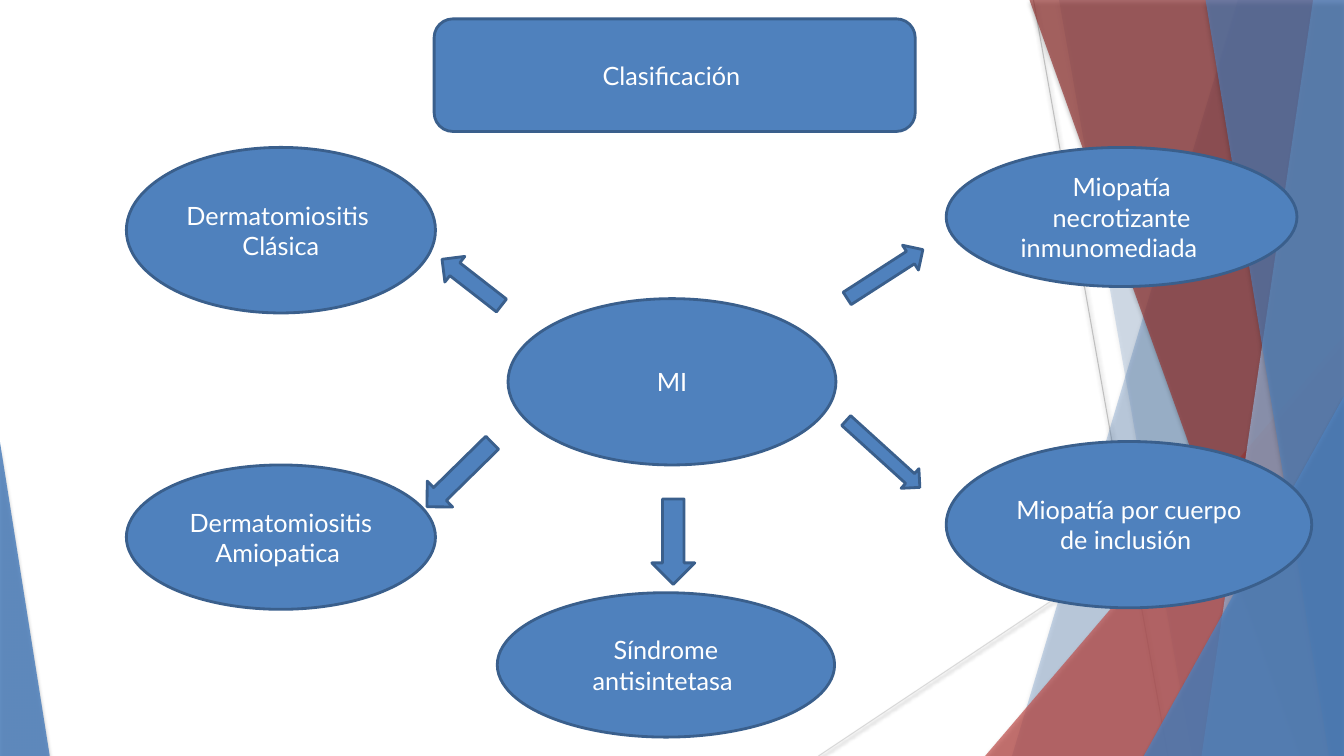
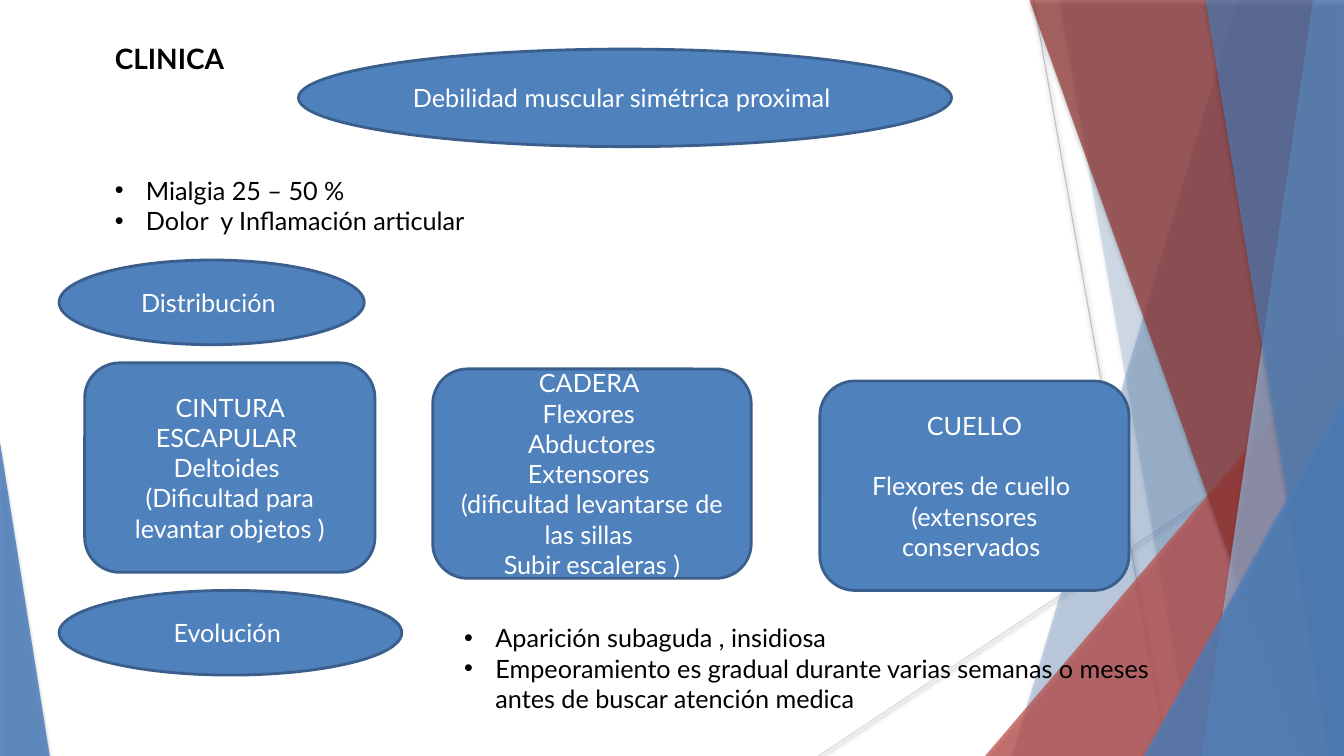
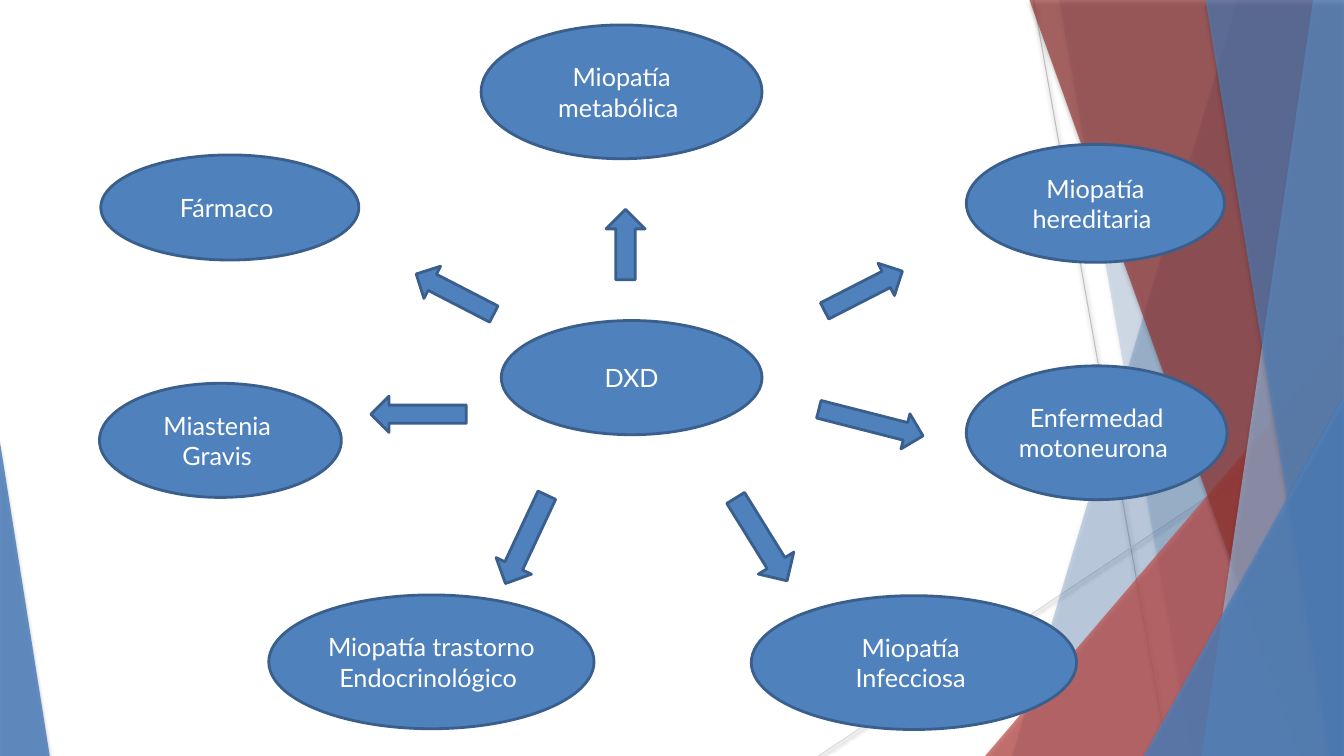
"""Builds three slides on inflammatory myopathies: classification, clinical picture and differential diagnosis."""
from lxml.etree import SubElement
from pptx import Presentation
from pptx.dml.color import RGBColor as RGB
from pptx.enum.shapes import MSO_CONNECTOR, MSO_SHAPE as SHAPE
from pptx.enum.text import MSO_ANCHOR as ANCHOR, PP_ALIGN as ALIGN
from pptx.oxml.ns import qn
from pptx.util import Inches, Pt

COL = {"blue": "4F81BD", "edge": "3A5F8C", "pale": "95B3D7", "red": "C0504D", "wine": "953735",
       "grey": "BFBFBF", "light": "D9D9D9", "white": "FFFFFF", "black": "000000"}
FONT = "Lato"
OVAL, ROUND = SHAPE.OVAL, SHAPE.ROUNDED_RECTANGLE
UP, DOWN, LEFT, RIGHT = SHAPE.UP_ARROW, SHAPE.DOWN_ARROW, SHAPE.LEFT_ARROW, SHAPE.RIGHT_ARROW

prs = Presentation()
prs.slide_width, prs.slide_height = Inches(13.33), Inches(7.5)
layout = prs.slide_layouts[6]
slides = [prs.slides.add_slide(layout) for _ in range(3)]


def grid(*xy):
    """Turns alternating x and y percentages of the slide into lengths."""
    sides = (prs.slide_width, prs.slide_height)
    return [round(v * sides[i % 2] / 100) for i, v in enumerate(xy)]


def write(p, text, colour, size=18, bold=False):
    """Adds one run to a paragraph."""
    r = p.add_run()
    r.text = text
    r.font.name, r.font.size, r.font.bold = FONT, Pt(size), bold
    r.font.color.rgb = RGB.from_string(COL[colour])


s = slides[0]
decor = []
for colour, ends in [("grey", (76.9, 0, 86.9, 100)), ("light", (100, 53.7, 60.9, 100))]:
    ln = s.shapes.add_connector(MSO_CONNECTOR.STRAIGHT, *grid(*ends))
    ln.line.color.rgb, ln.line.width = RGB.from_string(COL[colour]), Pt(0.75)
    decor.append((ln, 38, 3.1, 1.6))

facets = [
    ("band", (92.1, 75.3), "blue", 30),
    ("band", (78.8, 88.7), "blue", 20),
    ("triangle", (73.3, 44.4, 26.7, 55.6, 1), "red", 72),
    ("band", (76.6, 96.8), "wine", 70),
    ("band", (97.7, 89.4), "pale", 70),
    ("band", (89.7, 98.9), "blue", 65),
    ("triangle", (85.1, 52.4, 14.9, 47.6, 1), "blue", 80),
    ("triangle", (0, 58.5, 3.7, 41.5, 0), "blue", 85),
]
for kind, geo, colour, alpha in facets:
    if kind == "band":
        top, bottom = geo
        fb = s.shapes.build_freeform(*grid(top, 0))
        fb.add_line_segments([grid(100, 0), grid(100, 100), grid(bottom, 100)])
        sp = fb.convert_to_shape()
    else:
        sp = s.shapes.add_shape(SHAPE.ISOSCELES_TRIANGLE, *grid(*geo[:4]))
        sp.adjustments[0] = geo[4]
    sp.fill.solid()
    sp.fill.fore_color.rgb = RGB.from_string(COL[colour])
    sp.line.fill.background()
    clr = sp.element.xpath("./p:spPr/a:solidFill/a:srgbClr")[0]
    SubElement(clr, qn("a:alpha"), val=str(alpha * 1000))
    decor.append((sp, 35, 3, 2))

for sp, alpha, blur, dist in decor:
    fx = SubElement(sp.element.spPr, qn("a:effectLst"))
    sh = SubElement(fx, qn("a:outerShdw"), blurRad=str(Pt(blur)), dist=str(Pt(dist)),
                    dir="5400000", rotWithShape="0")
    clr = SubElement(sh, qn("a:srgbClr"), val=COL["black"])
    SubElement(clr, qn("a:alpha"), val=str(alpha * 1000))
    layout.shapes.element.append(sp.element)

nodes = [
    [
        (OVAL, (37.8, 39.5, 24.4, 22), ["MI"]),
        (ROUND, (32.3, 2.5, 35.8, 14.9), ["Clasificación "]),
        (OVAL, (9.4, 19.5, 23, 21.9), ["Dermatomiositis ", "Clásica"]),
        (OVAL, (9.4, 61.5, 23, 19.1), ["Dermatomiositis", "Amiopatica "]),
        (OVAL, (70.4, 19.5, 26.1, 18.4), ["Miopatía necrotizante inmunomediada \t"]),
        (OVAL, (70.4, 58.4, 27.2, 22), ["Miopatía por cuerpo de inclusión "]),
        (OVAL, (37, 78.4, 25.1, 19.1), ["Síndrome antisintetasa "]),
    ],
    [
        (OVAL, (22.2, 6.5, 48.6, 12.9), ["Debilidad muscular simétrica proximal "]),
        (OVAL, (4.4, 34.4, 22.7, 11.2), ["Distribución "]),
        (ROUND, (6.3, 48, 21.6, 27.7),
         ["CINTURA ESCAPULAR ", "Deltoides ", "(Dificultad para levantar objetos )"]),
        (ROUND, (32.2, 48.8, 23.7, 27.7),
         ["CADERA ", "Flexores ", "Abductores", "Extensores ",
          "(dificultad levantarse de las sillas ", "Subir escaleras )"]),
        (ROUND, (61, 50.4, 23, 27.7),
         ["CUELLO", "Flexores de cuello ", "(extensores conservados "], 21.6),
        (OVAL, (4.4, 78.1, 25.5, 11.2), ["Evolución "]),
    ],
    [
        (OVAL, (37.3, 42.4, 19.4, 15.1), ["DXD"]),
        (OVAL, (35.8, 3.3, 20.9, 17.7), ["Miopatía metabólica "]),
        (OVAL, (7.5, 20.5, 19.2, 13.9), ["Fármaco "]),
        (OVAL, (7.4, 50.7, 18, 15.1), ["Miastenia ", "Gravis "]),
        (OVAL, (20, 78.7, 24.2, 17.7), ["Miopatía trastorno ", "Endocrinológico "]),
        (OVAL, (55.9, 78.8, 24.2, 17.7), ["Miopatía ", "Infecciosa "]),
        (OVAL, (71.9, 48.4, 19.4, 17.7), ["Enfermedad motoneurona "]),
        (OVAL, (71.9, 19.1, 19.2, 15.6), ["Miopatía hereditaria "]),
    ],
]
arrows = [
    [
        (DOWN, (48.5, 66, 3.2, 11.3), 0),
        (RIGHT, (62.5, 34.3, 6.7, 3.9), 327.2),
        (RIGHT, (62, 58.3, 7.4, 3.5), 42.2),
        (LEFT, (32.3, 35.2, 5.6, 4.3), 37.9),
        (LEFT, (30.8, 60.4, 6.8, 4.8), 315.5),
    ],
    [],
    [
        (RIGHT, (60.8, 53.5, 8, 4.8), 14.3),
        (RIGHT, (61, 36.1, 6.5, 4.8), 332.9),
        (DOWN, (37.7, 64.9, 2.9, 12.9), 25.1),
        (DOWN, (55.1, 64.9, 3.1, 12.9), 328.2),
        (LEFT, (30.6, 36.5, 6.5, 4.8), 27.3),
        (LEFT, (27.6, 52.4, 7.1, 4.8), 0),
        (UP, (45.1, 27.7, 2.9, 9.3), 0),
    ],
]
for s, slide_nodes, slide_arrows in zip(slides, nodes, arrows):
    drawn = []
    for kind, at, lines, *gap in slide_nodes:
        sp = s.shapes.add_shape(kind, *grid(*at))
        tf = sp.text_frame
        tf.word_wrap, tf.vertical_anchor = True, ANCHOR.MIDDLE
        for i, line in enumerate(lines):
            p = tf.add_paragraph() if i else tf.paragraphs[0]
            p.alignment = ALIGN.CENTER
            write(p, line, "white")
        if gap:
            tf.paragraphs[0].space_after = Pt(gap[0])
        drawn.append(sp)
    for kind, at, turn in slide_arrows:
        sp = s.shapes.add_shape(kind, *grid(*at))
        sp.rotation = turn
        drawn.append(sp)
    for sp in drawn:
        sp.shadow.inherit = False
        sp.fill.solid()
        sp.fill.fore_color.rgb = RGB.from_string(COL["blue"])
        sp.line.color.rgb, sp.line.width = RGB.from_string(COL["edge"]), Pt(2)

s = slides[1]
tf = s.shapes.add_textbox(*grid(7.8, 4.8, 33.4, 5.7)).text_frame
tf.word_wrap = True
write(tf.paragraphs[0], "CLINICA", "black", 20, True)

bullets = [
    ((7.8, 22.5, 38.7, 9.3), ["Mialgia 25 – 50 %", "Dolor  y Inflamación articular"]),
    ((33.8, 81.7, 54.4, 13.3),
     ["Aparición subaguda , insidiosa",
      "Empeoramiento es gradual durante varias semanas o meses antes de buscar atención medica"]),
]
for at, lines in bullets:
    tf = s.shapes.add_textbox(*grid(*at)).text_frame
    tf.word_wrap = True
    for i, line in enumerate(lines):
        p = tf.add_paragraph() if i else tf.paragraphs[0]
        write(p, line, "black")
        pr = p._p.get_or_add_pPr()
        pr.set("marL", str(Inches(0.31)))
        pr.set("indent", str(-Inches(0.31)))
        SubElement(pr, qn("a:buFont"), typeface="Arial")
        SubElement(pr, qn("a:buChar"), char="•")

prs.save("out.pptx")
